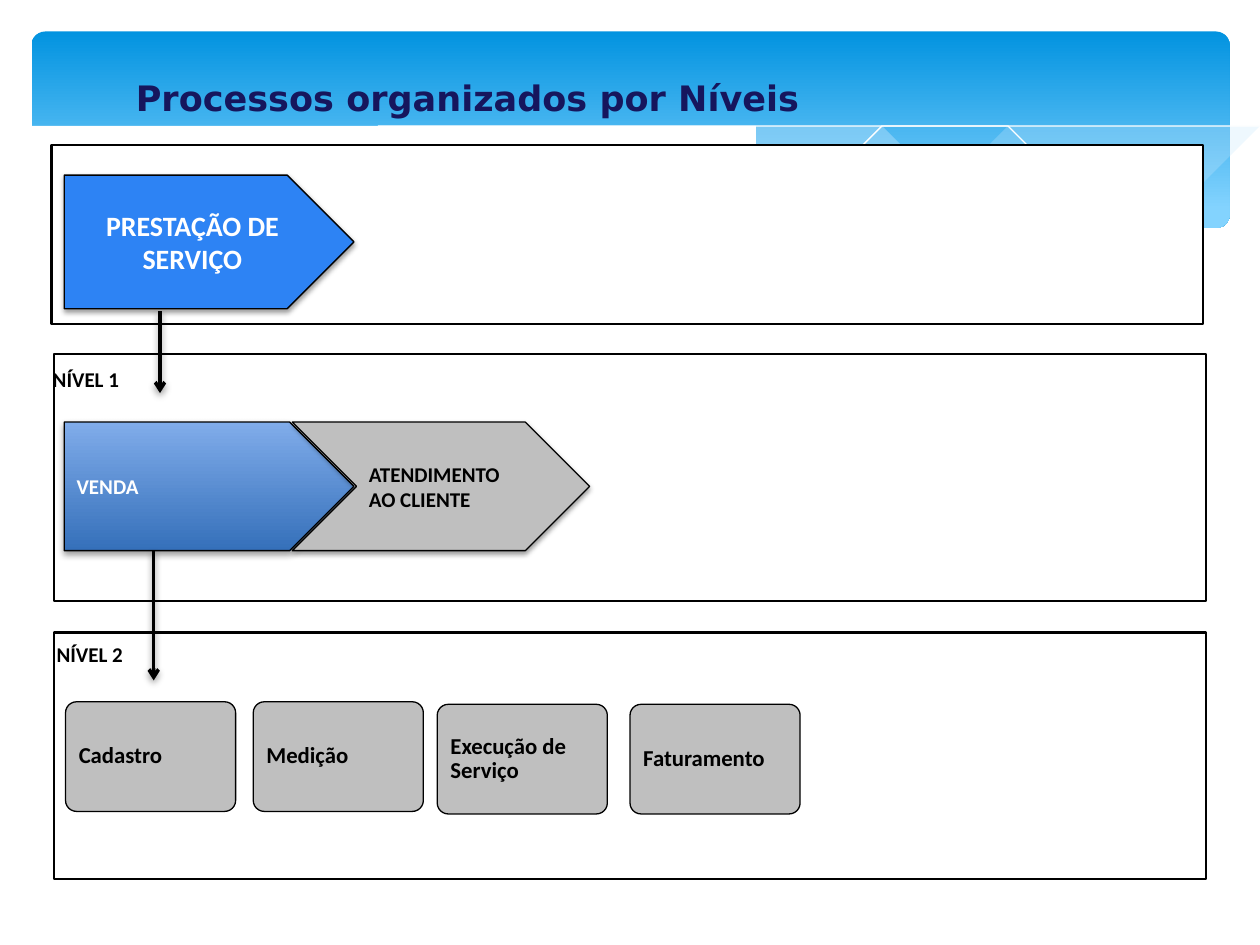
from lxml.etree import SubElement
from pptx import Presentation
from pptx.dml.color import RGBColor
from pptx.enum.shapes import MSO_CONNECTOR, MSO_SHAPE as Shape
from pptx.enum.text import MSO_ANCHOR as Anchor, PP_ALIGN as Align
from pptx.oxml.ns import qn
from pptx.util import Inches, Pt

WIDTH, HEIGHT = 10, 7.5
BLACK, WHITE, GRAY, NAVY = "000000", "FFFFFF", "BFBFBF", "16165D"

# Header waves: points, fill, opacity in percent, closed outline
WAVES = [
    ([(9.76, 0.94), (9.48, 0.99), (9.21, 1.04), (8.91, 1.1), (8.61, 1.18), (8.05, 1.31),
      (7.53, 1.43), (7.06, 1.52), (6.61, 1.6), (7.05, 1.65), (7.45, 1.69), (7.81, 1.72),
      (8.24, 1.72), (8.63, 1.7), (8.97, 1.65), (9.28, 1.58), (9.49, 1.52), (9.76, 1.41)],
     "C6E7FC", 29, True),
    ([(8.93, 1.67), (8.66, 1.64), (8.07, 1.54), (7.41, 1.42), (6.68, 1.26), (5.98, 1.09),
      (5.41, 0.97), (5.02, 0.9), (4.65, 0.86), (4.2, 0.82), (3.8, 0.8), (3.44, 0.8),
      (3.13, 0.82), (2.86, 0.86), (3.23, 0.9), (3.62, 0.97), (4.04, 1.06), (4.49, 1.16),
      (5.3, 1.35), (6.01, 1.5), (6.5, 1.58), (6.95, 1.65), (7.36, 1.69), (7.85, 1.72),
      (8.28, 1.73), (8.57, 1.71)],
     "C6E7FC", 40, True),
    ([(3.09, 0.9), (3.28, 0.86), (3.53, 0.84), (3.87, 0.82), (4.16, 0.81), (4.5, 0.82),
      (4.89, 0.84), (5.33, 0.88), (5.82, 0.94), (6.36, 1.03), (6.95, 1.14), (7.6, 1.28),
      (8.31, 1.45), (9.07, 1.66)],
     None, 100, False),
    ([(6.13, 1.51), (6.53, 1.41), (6.95, 1.3), (7.48, 1.17), (8.06, 1.04), (8.66, 0.93),
      (8.95, 0.88), (9.24, 0.84), (9.51, 0.82), (9.75, 0.8)],
     None, 100, False),
    ([(9.77, 1.41), (9.5, 1.51), (9.2, 1.59), (8.87, 1.66), (8.5, 1.7), (8.09, 1.71),
      (7.61, 1.7), (7.08, 1.65), (6.48, 1.56), (5.79, 1.44), (5.03, 1.28), (4.47, 1.14),
      (3.91, 1.02), (3.4, 0.92), (2.92, 0.85), (2.5, 0.81), (2.11, 0.78), (1.77, 0.78),
      (1.46, 0.79), (1.19, 0.82), (0.95, 0.85), (0.76, 0.89), (0.59, 0.93), (0.46, 0.98),
      (0.36, 1.02), (0.23, 1.07), (0.23, 2.24), (9.77, 2.24)],
     WHITE, 100, True),
]
PANEL_WIDTH, LEVEL_HEIGHT = 9.14, 1.96
PANELS = [(0.41, 1.15, 1.42), (0.43, 2.81, LEVEL_HEIGHT), (0.43, 5.02, LEVEL_HEIGHT)]
LABELS = [  # text, left, top, width, height, size, font, colour
    ("NÍVEL 1", 0.32, 2.86, 0.95, 0.3, 12, "Calibri", BLACK),
    ("Processos organizados por Níveis", 0.98, 0.56, 7.87, 0.44, 20, "DejaVu Sans", NAVY),
    ("NÍVEL 2", 0.35, 5.04, 0.95, 0.3, 12, "Calibri", BLACK),
]
STEPS = [  # text, preset, left, top, width, height, fill, size, colour, alignment, shadow
    ("PRESTAÇÃO DE SERVIÇO", Shape.PENTAGON, 0.51, 1.39, 2.3, 1.06, "2D83F4",
     16, WHITE, Align.CENTER, (3.1, 1.6)),
    ("VENDA", Shape.PENTAGON, 0.51, 3.35, 2.3, 1.02, [(0, "80ACEA"), (1, "3570BA")],
     12, WHITE, Align.LEFT, (4, 2)),
    ("ATENDIMENTO AO CLIENTE", Shape.CHEVRON, 2.32, 3.35, 2.36, 1.02, GRAY,
     12, BLACK, Align.LEFT, (3.1, 1.6)),
]
CARD_SIZE = (1.35, 0.87)
CARDS = [("Cadastro", 0.52, 5.57), ("Medição", 2.01, 5.57),
         ("Execução de Serviço", 3.47, 5.59), ("Faturamento", 5, 5.59)]
ARROWS = [(1.22, 4.37, 5.4), (1.27, 2.47, 3.12)]  # x, top, bottom


def color(value):
    return RGBColor.from_string(value)


def set_fill(shape, fill):
    """Fill with nothing, one colour, or a list of (position, colour) from top down."""
    if fill is None:
        shape.fill.background()
    elif isinstance(fill, str):
        shape.fill.solid()
        shape.fill.fore_color.rgb = color(fill)
    else:
        shape.fill.gradient()
        shape.fill.gradient_angle = 270
        for stop, (position, value) in zip(shape.fill.gradient_stops, fill):
            stop.position, stop.color.rgb = position, color(value)


def set_line(shape, value, width):
    if value is None:
        shape.line.fill.background()
    else:
        shape.line.color.rgb = color(value)
        shape.line.width = Pt(width)


def style(shape, fill, line=None, width=0.75):
    shape.shadow.inherit = False
    set_fill(shape, fill)
    set_line(shape, line, width)
    return shape


def add_box(page, preset, bounds, fill, line=None, width=0.75):
    return style(page.shapes.add_shape(preset, *map(Inches, bounds)), fill, line, width)


def add_shadow(effects, blur, distance):
    shadow = SubElement(effects, qn("a:outerShdw"), blurRad=str(Pt(blur)),
                        dist=str(Pt(distance)), dir="5400000", rotWithShape="0")
    value = SubElement(shadow, qn("a:srgbClr"), val=BLACK)
    SubElement(value, qn("a:alpha"), val="38000")


def write(box, text, size, value, font="Calibri", align=Align.LEFT,
          anchor=Anchor.MIDDLE, spacing=1, **insets):
    frame = box.text_frame
    settings = {"word_wrap": True, "vertical_anchor": anchor, **insets}
    for name, setting in settings.items():
        setattr(frame, name, setting)
    para = frame.paragraphs[0]
    para.alignment, para.line_spacing = align, spacing
    span = para.add_run()
    span.text = text
    for name, setting in {"name": font, "size": Pt(size), "bold": True}.items():
        setattr(span.font, name, setting)
    span.font.color.rgb = color(value)


def add_wave(page, points, fill, opacity, closed):
    builder = page.shapes.build_freeform(*points[0], scale=Inches(1))
    builder.add_line_segments(points[1:], close=closed)
    wave = style(builder.convert_to_shape(), fill, None if closed else WHITE, 0)
    if opacity < 100:
        value = wave.fill._xPr.find(qn("a:solidFill"))[0]
        SubElement(value, qn("a:alpha"), val=str(opacity * 1000))


def add_arrow(page, x, top, bottom):
    arrow = page.shapes.add_connector(MSO_CONNECTOR.STRAIGHT,
                                      *map(Inches, (x, top, x, bottom)))
    set_line(arrow, BLACK, 2)
    SubElement(arrow.line._get_or_add_ln(), qn("a:tailEnd"), type="arrow")
    add_shadow(SubElement(arrow._element.spPr, qn("a:effectLst")), 4, 2)


def main():
    deck = Presentation()
    deck.slide_width, deck.slide_height = Inches(WIDTH), Inches(HEIGHT)
    page = deck.slides.add_slide(deck.slide_layouts[6])

    header = add_box(page, Shape.ROUNDED_RECTANGLE, (0.25, 0.25, 9.51, 1.56),
                     [(0, "0293E0"), (0.9, "83D3FE")])
    header.adjustments[0] = 0.07
    for wave in WAVES:
        add_wave(page, *wave)

    for left, top, height in PANELS:
        add_box(page, Shape.RECTANGLE, (left, top, PANEL_WIDTH, height), WHITE, BLACK, 1.25)
    for text, left, top, width, height, size, font, value in LABELS:
        box = page.shapes.add_textbox(*map(Inches, (left, top, width, height)))
        write(box, text, size, value, font, anchor=Anchor.TOP)

    for text, preset, left, top, width, height, fill, size, value, align, shadow in STEPS:
        step = add_box(page, preset, (left, top, width, height), fill, BLACK)
        add_shadow(step._element.spPr.find(qn("a:effectLst")), *shadow)
        write(step, text, size, value, align=align)

    inset = dict.fromkeys(("margin_left", "margin_top", "margin_right", "margin_bottom"),
                          Inches(0.08))
    for text, left, top in CARDS:
        card = add_box(page, Shape.ROUNDED_RECTANGLE, (left, top, *CARD_SIZE), GRAY, BLACK)
        card.adjustments[0] = 0.1
        write(card, text, 13, BLACK, spacing=0.9, **inset)
    for arrow in ARROWS:
        add_arrow(page, *arrow)

    deck.save("out.pptx")


if __name__ == "__main__":
    main()
